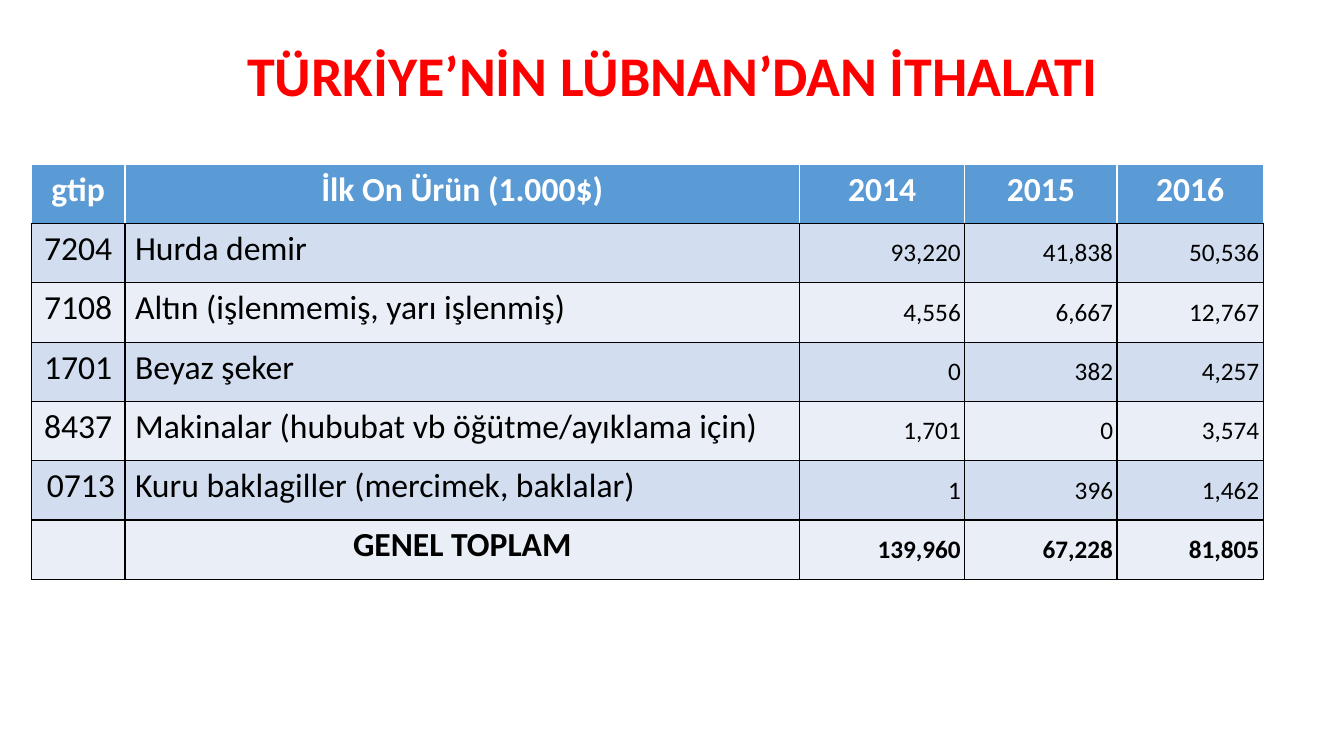
from dataclasses import dataclass
from lxml import etree
from pptx import Presentation
from pptx import util as u
from pptx.dml.color import RGBColor
from pptx.enum import text
from pptx.oxml.ns import qn

PX = 9144
ALIGN = text.PP_ALIGN


@dataclass(frozen=True)
class Theme:
    font: str = "Calibri"
    title: str = "FF0000"
    ink: str = "000000"
    white: str = "FFFFFF"
    header: str = "5B9BD5"
    bands: tuple = ("D2DEEF", "EAEFF7")
    title_size: int = 40
    label_size: int = 24
    figure_size: int = 18
    border: int = 1


THEME = Theme()
TITLE = "TÜRKİYE’NİN LÜBNAN’DAN İTHALATI"
COLUMN_WIDTHS = (93, 669, 164, 151, 145)
IMPORTS = (
    ("gtip", "İlk On Ürün (1.000$)", "2014", "2015", "2016"),
    ("7204", "Hurda demir", "93,220", "41,838", "50,536"),
    ("7108", "Altın (işlenmemiş, yarı işlenmiş)", "4,556", "6,667", "12,767"),
    ("1701", "Beyaz şeker", "0", "382", "4,257"),
    ("8437", "Makinalar (hububat vb öğütme/ayıklama için)", "1,701", "0", "3,574"),
    ("0713", "Kuru baklagiller (mercimek, baklalar)", "1", "396", "1,462"),
    ("", "GENEL TOPLAM", "139,960", "67,228", "81,805"),
)


def px(length):
    return u.Emu(length * PX)


def style_para(para, size, color, bold, align):
    para.alignment = align
    for font in (para.font, *(span.font for span in para.runs)):
        font.name = THEME.font
        font.size = u.Pt(size)
        font.bold = bold
        font.color.rgb = RGBColor.from_string(color)


def set_borders(cell, colors):
    properties = cell._tc.get_or_add_tcPr()
    for index, (side, color) in enumerate(zip("LRTB", colors)):
        line = etree.Element(qn(f"a:ln{side}"), w=str(u.Pt(THEME.border)))
        fill = etree.SubElement(line, qn("a:solidFill"))
        etree.SubElement(fill, qn("a:srgbClr"), val=color)
        properties.insert(index, line)


def add_title(page, left, top, width, height):
    box = page.shapes.title
    box.left, box.top, box.width, box.height = map(px, (left, top, width, height))
    frame = box.text_frame
    frame.text = TITLE
    frame.word_wrap = True
    frame.vertical_anchor = text.MSO_ANCHOR.MIDDLE
    para = frame.paragraphs[0]
    para.line_spacing = 0.9
    style_para(para, THEME.title_size, THEME.title, True, ALIGN.CENTER)


def style_cell(cell, row, column):
    is_header = row == 0
    is_total = row == len(IMPORTS) - 1
    is_figure = column >= 2 and not is_header
    cell.fill.solid()
    color = THEME.header if is_header else THEME.bands[(row - 1) % 2]
    cell.fill.fore_color.rgb = RGBColor.from_string(color)
    edge = THEME.white if is_header else THEME.ink
    set_borders(cell, (edge, edge, edge, THEME.ink))

    if is_figure:
        cell.vertical_anchor = text.MSO_ANCHOR.MIDDLE
        cell.margin_left = cell.margin_right = px(4)
        cell.margin_top = cell.margin_bottom = px(4)
    if is_figure or cell.text == "0713":
        align = ALIGN.RIGHT
    elif column == 1 and not (is_header or is_total):
        align = ALIGN.LEFT
    else:
        align = ALIGN.CENTER
    size = THEME.figure_size if is_figure else THEME.label_size
    ink = THEME.white if is_header else THEME.ink
    style_para(cell.text_frame.paragraphs[0], size, ink, is_header or is_total, align)


def add_import_table(page, left, top, width, height):
    frame = page.shapes.add_table(
        len(IMPORTS), len(COLUMN_WIDTHS), *map(px, (left, top, width, height))
    )
    table = frame.table
    for column, share in zip(table.columns, COLUMN_WIDTHS):
        column.width = px(round(width * share / sum(COLUMN_WIDTHS)))
    for row, values in enumerate(IMPORTS):
        for column, value in enumerate(values):
            cell = table.cell(row, column)
            cell.text = value
            style_cell(cell, row, column)


def main():
    deck = Presentation()
    deck.slide_width, deck.slide_height = px(1333), px(750)
    page = deck.slides.add_slide(deck.slide_layouts[5])
    add_title(page, 92, 40, 1150, 75)
    add_import_table(page, 31, 163, 1222, 412)
    deck.save("out.pptx")


if __name__ == "__main__":
    main()
